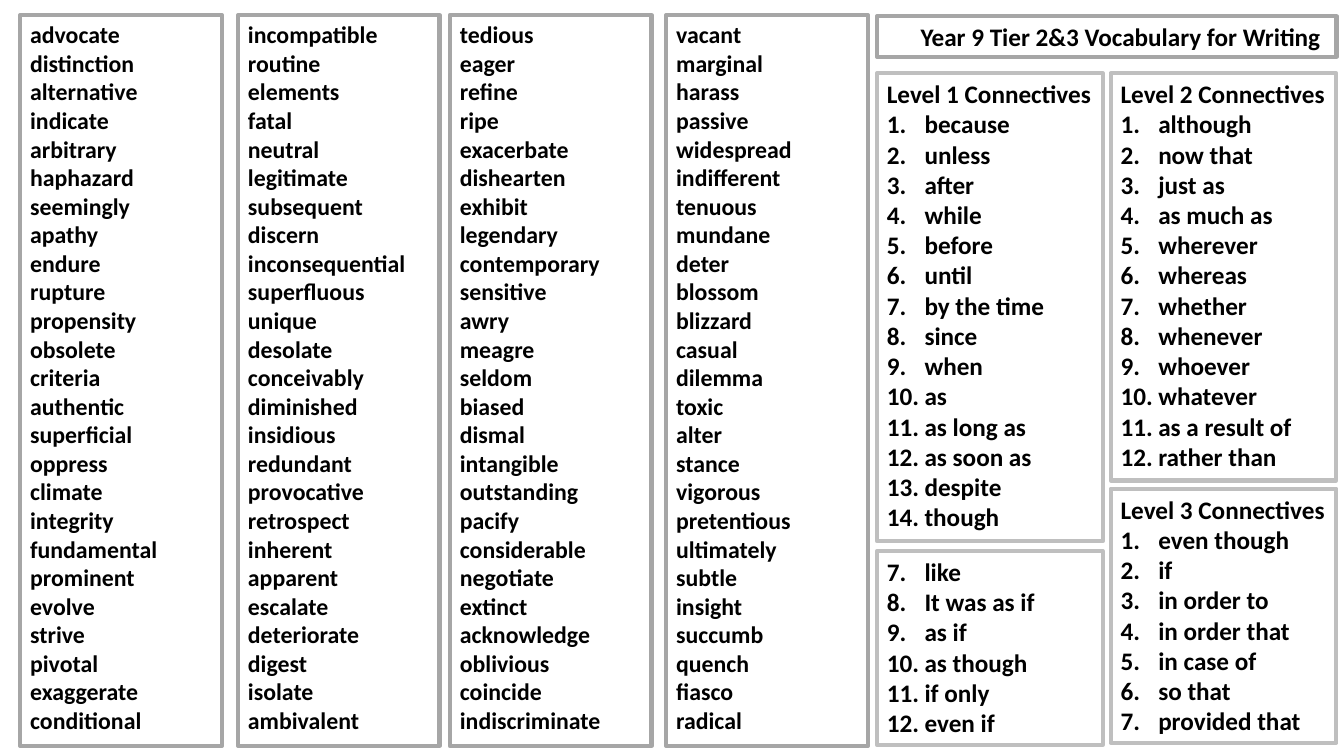
from dataclasses import dataclass

from lxml.etree import SubElement
from pptx import Presentation
from pptx.dml.color import RGBColor
from pptx.enum.shapes import MSO_SHAPE as Shape
from pptx.enum.text import MSO_ANCHOR as Anchor, MSO_AUTO_SIZE as AutoSize, PP_ALIGN as Align
from pptx.oxml.ns import qn
from pptx.util import Cm, Pt


@dataclass(frozen=True)
class Theme:
    font: str = "Calibri"
    ink: RGBColor = RGBColor(0x00, 0x00, 0x00)
    word_border: RGBColor = RGBColor(0xA6, 0xA6, 0xA6)
    connective_border: RGBColor = RGBColor(0xBF, 0xBF, 0xBF)
    border_width: Pt = Pt(3)
    word_size: Pt = Pt(17)
    connective_size: Pt = Pt(18)
    title_size: Pt = Pt(18)
    number_indent: Cm = Cm(0.95)


WORD_COLUMNS = {
    0.51: """advocate distinction alternative indicate arbitrary haphazard seemingly apathy
        endure rupture propensity obsolete criteria authentic superficial oppress climate
        integrity fundamental prominent evolve strive pivotal exaggerate conditional""",
    6.0: """incompatible routine elements fatal neutral legitimate subsequent discern
        inconsequential superfluous unique desolate conceivably diminished insidious redundant
        provocative retrospect inherent apparent escalate deteriorate digest isolate ambivalent""",
    11.34: """tedious eager refine ripe exacerbate dishearten exhibit legendary contemporary
        sensitive awry meagre seldom biased dismal intangible outstanding pacify considerable
        negotiate extinct acknowledge oblivious coincide indiscriminate""",
    16.79: """vacant marginal harass passive widespread indifferent tenuous mundane deter blossom
        blizzard casual dilemma toxic alter stance vigorous pretentious ultimately subtle
        insight succumb quench fiasco radical""",
}
WORD_TOP, WORD_WIDTH, WORD_HEIGHT = 0.38, 5.08, 18.42

LEFT_PANEL, RIGHT_PANEL, PANEL_WIDTH = 22.1, 27.99, 5.69
# left, top, height, heading, first number, connectives
CONNECTIVE_PANELS = [
    (RIGHT_PANEL, 1.85, 10.26, "Level 2 Connectives", 1,
     ["although", "now that", "just as", "as much as", "wherever", "whereas", "whether",
      "whenever", "whoever", "whatever", "as a result of", "rather than"]),
    (RIGHT_PANEL, 12.32, 6.4, "Level 3 Connectives", 1,
     ["even though", "if", "in order to", "in order that", "in case of", "so that",
      "provided that"]),
    (LEFT_PANEL, 1.85, 11.79, "Level 1 Connectives", 1,
     ["because", "unless", "after", "while", "before", "until", "by the time", "since",
      "when", "as", "as long as", "as soon as", "despite", "though"]),
    (LEFT_PANEL, 13.89, 4.88, None, 7,
     ["like", "It was as if", "as if", "as though", "if only", "even if"]),
]


def write(paragraph, text, *, theme, size, align=Align.LEFT, number_from=None):
    """Fill a paragraph, auto-numbered when number_from is given."""
    if number_from is not None:
        properties = paragraph._p.get_or_add_pPr()
        properties.set("marL", str(theme.number_indent))
        properties.set("indent", str(-theme.number_indent))
        SubElement(properties, qn("a:buFont"), typeface="+mj-lt")
        numbering = SubElement(properties, qn("a:buAutoNum"), type="arabicPeriod")
        if number_from > 1:
            numbering.set("startAt", str(number_from))
    paragraph.alignment = align
    paragraph.line_spacing = 1.0
    run = paragraph.add_run()
    run.text = text
    font = run.font
    font.name, font.size, font.bold = theme.font, size, True
    font.color.rgb = theme.ink


class VocabularySlide:
    def __init__(self, deck, theme):
        self.theme = theme
        self.slide = deck.slides.add_slide(deck.slide_layouts[5])

    def frame(self, box, border, auto_size):
        """Outline a box and prepare its text frame."""
        box.fill.background()
        box.line.color.rgb = border
        box.line.width = self.theme.border_width
        text_frame = box.text_frame
        text_frame.word_wrap = True
        text_frame.auto_size = auto_size
        text_frame.vertical_anchor = Anchor.TOP
        return text_frame

    def title(self, text, left, top, width, height):
        heading = self.slide.shapes.title
        heading.left, heading.top = Cm(left), Cm(top)
        heading.width, heading.height = Cm(width), Cm(height)
        text_frame = self.frame(heading, self.theme.word_border, AutoSize.NONE)
        write(text_frame.paragraphs[0], text, theme=self.theme,
              size=self.theme.title_size, align=Align.RIGHT)

    def panel(self, lines, left, top, width, height, *, border, size):
        """Draw a framed list of (text, first number or None) lines."""
        box = self.slide.shapes.add_shape(
            Shape.RECTANGLE, Cm(left), Cm(top), Cm(width), Cm(height))
        box.shadow.inherit = False
        text_frame = self.frame(box, border, AutoSize.SHAPE_TO_FIT_TEXT)
        for index, (text, number_from) in enumerate(lines):
            paragraph = text_frame.add_paragraph() if index else text_frame.paragraphs[0]
            write(paragraph, text, theme=self.theme, size=size, number_from=number_from)

    def word_column(self, words, left):
        self.panel([(word, None) for word in words], left, WORD_TOP, WORD_WIDTH, WORD_HEIGHT,
                   border=self.theme.word_border, size=self.theme.word_size)

    def connectives(self, left, top, height, heading, first_number, items):
        lines = [(heading, None)] if heading else []
        lines += [(item, first_number) for item in items]
        self.panel(lines, left, top, PANEL_WIDTH, height,
                   border=self.theme.connective_border, size=self.theme.connective_size)


def main():
    deck = Presentation()
    deck.slide_width, deck.slide_height = Cm(33.87), Cm(19.05)
    page = VocabularySlide(deck, Theme())
    for left, words in WORD_COLUMNS.items():
        page.word_column(words.split(), left)
    page.title("Year 9 Tier 2&3 Vocabulary for Writing ", LEFT_PANEL, 0.41, 11.58, 1.02)
    for panel in CONNECTIVE_PANELS:
        page.connectives(*panel)
    deck.save("out.pptx")


if __name__ == "__main__":
    main()
